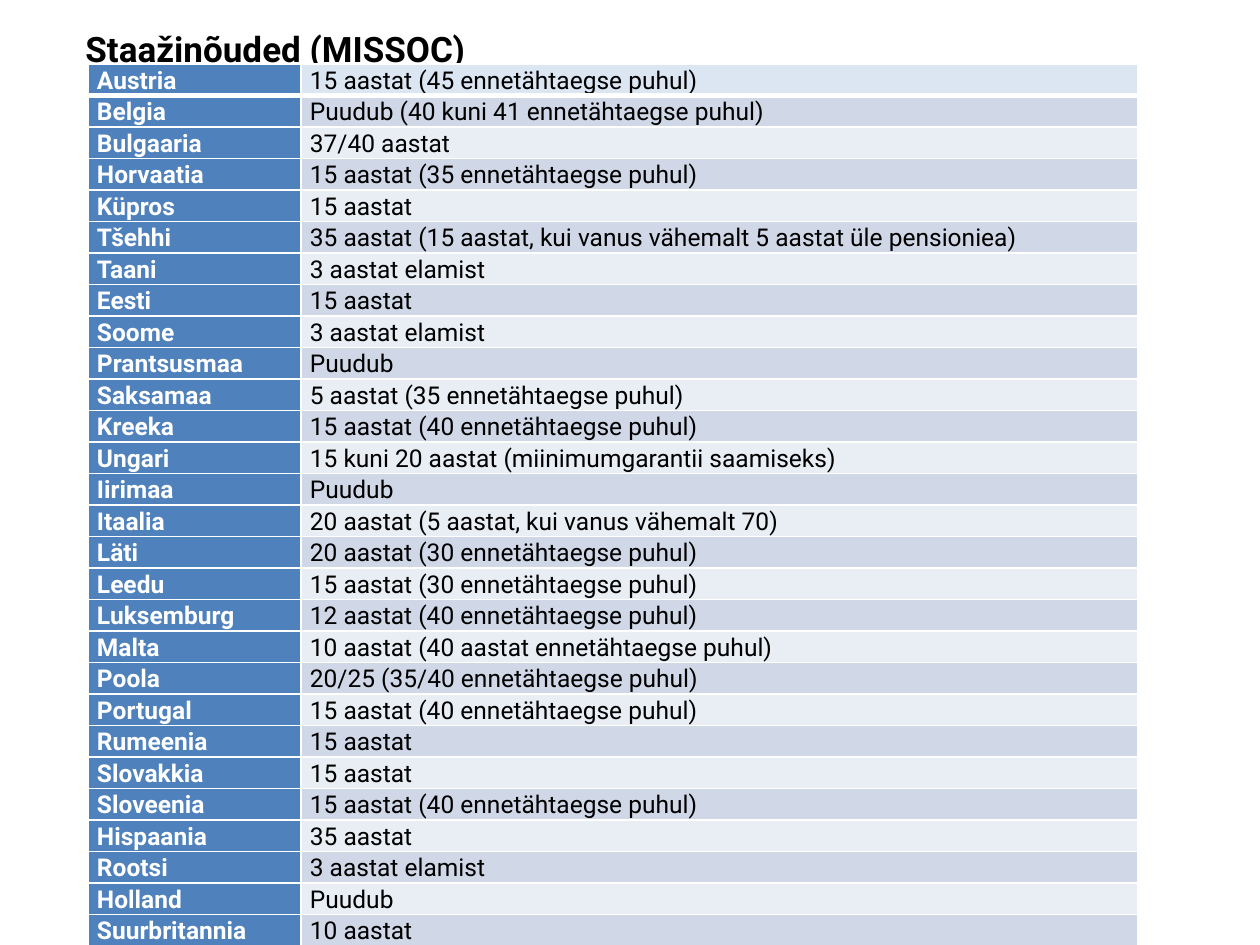
from pptx import Presentation
from pptx.dml.color import RGBColor
from pptx.enum.text import MSO_ANCHOR as Anchor, PP_ALIGN as Align
from pptx.oxml.ns import qn
from pptx.util import Inches, Pt
from lxml.etree import SubElement

TITLE = "Staažinõuded (MISSOC)"
REQUIREMENTS = [
    ("Austria", "15 aastat (45 ennetähtaegse puhul)"),
    ("Belgia", "Puudub (40 kuni 41 ennetähtaegse puhul)"),
    ("Bulgaaria", "37/40 aastat"),
    ("Horvaatia", "15 aastat (35 ennetähtaegse puhul)"),
    ("Küpros", "15 aastat"),
    ("Tšehhi", "35 aastat (15 aastat, kui vanus vähemalt 5 aastat üle pensioniea)"),
    ("Taani", "3 aastat elamist"),
    ("Eesti", "15 aastat"),
    ("Soome", "3 aastat elamist"),
    ("Prantsusmaa", "Puudub"),
    ("Saksamaa", "5 aastat (35 ennetähtaegse puhul)"),
    ("Kreeka", "15 aastat (40 ennetähtaegse puhul)"),
    ("Ungari", "15 kuni 20 aastat (miinimumgarantii saamiseks)"),
    ("Iirimaa", "Puudub"),
    ("Itaalia", "20 aastat (5 aastat, kui vanus vähemalt 70)"),
    ("Läti", "20 aastat (30 ennetähtaegse puhul)"),
    ("Leedu", "15 aastat (30 ennetähtaegse puhul)"),
    ("Luksemburg", "12 aastat (40 ennetähtaegse puhul)"),
    ("Malta", "10 aastat (40 aastat ennetähtaegse puhul)"),
    ("Poola", "20/25 (35/40 ennetähtaegse puhul)"),
    ("Portugal", "15 aastat (40 ennetähtaegse puhul)"),
    ("Rumeenia", "15 aastat"),
    ("Slovakkia", "15 aastat"),
    ("Sloveenia", "15 aastat (40 ennetähtaegse puhul)"),
    ("Hispaania", "35 aastat"),
    ("Rootsi", "3 aastat elamist"),
    ("Holland", "Puudub"),
    ("Suurbritannia", "10 aastat"),
]
COLUMN_WIDTHS = [1.69, 6.64]
ROW_HEIGHT = 0.22
COUNTRY_FILL, FIRST_FILL = "4F81BD", "DCE6F2"
BAND_FILLS = ["E9EDF4", "D0D8E8"]
WHITE, BLACK = "FFFFFF", "000000"
CELL_FORMAT = {
    "margin_left": Inches(0.07), "margin_right": Inches(0.07),
    "margin_top": 0, "margin_bottom": 0,
}
TITLE_FORMAT = {"word_wrap": True, "vertical_anchor": Anchor.MIDDLE}


def color(value):
    return RGBColor.from_string(value)


def apply(target, values):
    for name, value in values.items():
        setattr(target, name, value)


def write(para, text, size, shade, bold):
    span = para.add_run()
    span.text = text
    apply(span.font, {"name": "Roboto", "size": Pt(size), "bold": bold})
    span.font.color.rgb = color(shade)


def add_border(cell, side, points):
    line = SubElement(cell._tc.get_or_add_tcPr(), qn(f"a:ln{side}"), w=str(Pt(points)))
    fill = SubElement(line, qn("a:solidFill"))
    SubElement(fill, qn("a:srgbClr"), val=WHITE)


def fill_cell(cell, row, column, text):
    is_country = column == 0
    apply(cell, CELL_FORMAT)
    para = cell.text_frame.paragraphs[0]
    para.line_spacing = 1.07
    write(para, text, 14, WHITE if is_country else BLACK, is_country)
    widths = {"L": 1, "R": 1, "T": 3 if row == 1 else 1, "B": 3 if row == 0 else 1}
    for side, points in widths.items():
        add_border(cell, side, points)
    band = BAND_FILLS[row % 2] if row else FIRST_FILL
    cell.fill.solid()
    cell.fill.fore_color.rgb = color(COUNTRY_FILL if is_country else band)


def main():
    deck = Presentation()
    apply(deck, {"slide_width": Inches(10), "slide_height": Inches(7.5)})
    page = deck.slides.add_slide(deck.slide_layouts[6])

    box = page.shapes.add_textbox(Inches(0.58), Inches(-0.13), Inches(8.84), Inches(1.03))
    apply(box.text_frame, TITLE_FORMAT)
    heading = box.text_frame.paragraphs[0]
    heading.alignment = Align.LEFT
    write(heading, TITLE, 20, BLACK, True)

    table = page.shapes.add_table(
        len(REQUIREMENTS), len(COLUMN_WIDTHS), Inches(0.7), Inches(0.51),
        Inches(sum(COLUMN_WIDTHS)), Inches(ROW_HEIGHT * len(REQUIREMENTS)),
    ).table
    for column, width in zip(table.columns, COLUMN_WIDTHS):
        column.width = Inches(width)
    for row, texts in enumerate(REQUIREMENTS):
        table.rows[row].height = Inches(ROW_HEIGHT)
        for column, text in enumerate(texts):
            fill_cell(table.cell(row, column), row, column, text)

    deck.save("out.pptx")


if __name__ == "__main__":
    main()
